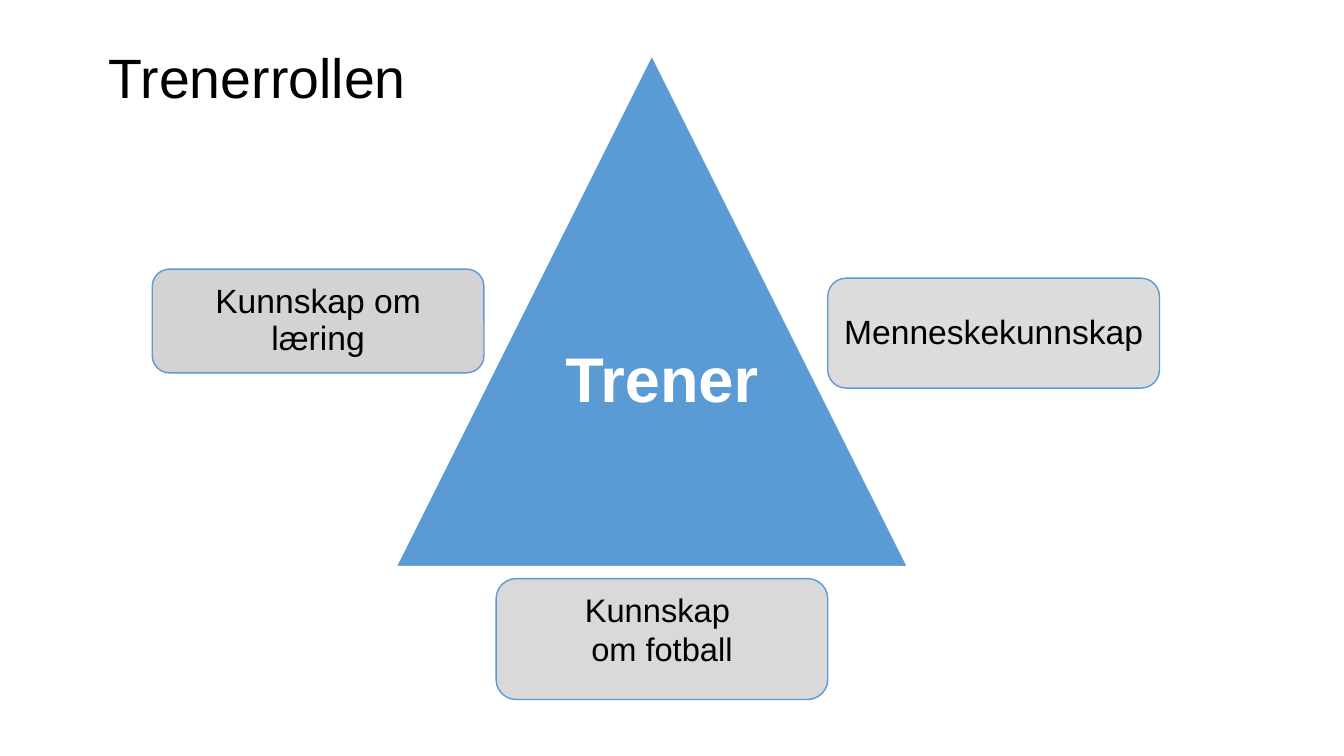
import pptx
import pptx.util
import pptx.dml.color
import pptx.enum.shapes
import pptx.enum.text
import pptx.oxml
import pptx.oxml.ns

Inches = pptx.util.Inches
Shape = pptx.enum.shapes.MSO_SHAPE
Anchor = pptx.enum.text.MSO_ANCHOR
Align = pptx.enum.text.PP_ALIGN
BLUE, WHITE, BLACK = "5B9BD5", "FFFFFF", "000000"


def color(code):
    return pptx.dml.color.RGBColor.from_string(code)


def apply(target, values):
    for name, value in values.items():
        setattr(target, name, value)


def write(shape, lines, size, tint=BLACK, bold=False, align=Align.CENTER,
          space=1.0, **frame):
    """Fill a shape with one paragraph per line."""
    text = shape.text_frame
    apply(text, {"word_wrap": True, **frame})
    text.text = "\n".join(lines)
    for para in text.paragraphs:
        apply(para, {"alignment": align, "line_spacing": space})
        for run in para.runs:
            apply(run.font, {"name": "Arial", "size": pptx.util.Pt(size),
                             "bold": bold})
            run.font.color.rgb = color(tint)


def draw(slide, kind, box, fill, line, alpha=100):
    """Add a filled, outlined shape; alpha is opacity in percent."""
    shape = slide.shapes.add_shape(kind, *map(Inches, box))
    shape.shadow.inherit = False
    shape.fill.solid()
    shape.fill.fore_color.rgb = color(fill)
    shape.line.color.rgb = color(line)
    shape.line.width = pptx.util.Pt(1)
    if alpha < 100:
        tone = shape.fill._xPr.find(".//" + pptx.oxml.ns.qn("a:srgbClr"))
        tone.append(pptx.oxml.parse_xml(
            f'<a:alpha {pptx.oxml.ns.nsdecls("a")} val="{alpha * 1000}"/>'))
    return shape


def head(slide, text):
    title = slide.shapes.title
    box = map(Inches, (0.98, 0.42, 10.54, 0.76))
    apply(title, dict(zip(("left", "top", "width", "height"), box)))
    write(title, [text], 39.6, align=Align.LEFT, space=0.9,
          vertical_anchor=Anchor.MIDDLE,
          auto_size=pptx.enum.text.MSO_AUTO_SIZE.NONE)


def card(slide, box, fill, text):
    """Add a see-through rounded box with centred text."""
    shape = draw(slide, Shape.ROUNDED_RECTANGLE, box, fill, BLUE, 90)
    sides = ("left", "top", "right", "bottom")
    write(shape, [text], 24, space=0.9, vertical_anchor=Anchor.MIDDLE,
          **{f"margin_{side}": Inches(0.1) for side in sides})


def label(slide, box, text):
    shape = slide.shapes.add_textbox(*map(Inches, box))
    write(shape, [text], 45, WHITE, True, Align.LEFT, word_wrap=False)


def main():
    deck = pptx.Presentation()
    apply(deck, {"slide_width": Inches(13.33), "slide_height": Inches(7.5)})
    slide = deck.slides.add_slide(deck.slide_layouts[5])
    head(slide, "Trenerrollen")
    draw(slide, Shape.ISOSCELES_TRIANGLE, (3.93, 0.55, 5.07, 5.07), BLUE, WHITE)
    card(slide, (1.51, 2.67, 3.29, 1.03), "D0CECE", "Kunnskap om læring")
    card(slide, (8.21, 2.76, 3.29, 1.09), "D9D9D9", "Menneskekunnskap")
    base = draw(slide, Shape.ROUNDED_RECTANGLE, (4.92, 5.74, 3.29, 1.2),
                "D9D9D9", BLUE)
    write(base, ["Kunnskap ", "om fotball"], 23.3, vertical_anchor=Anchor.TOP)
    label(slide, (5.51, 3.32, 2.13, 0.86), "Trener")
    deck.save("out.pptx")


if __name__ == "__main__":
    main()
